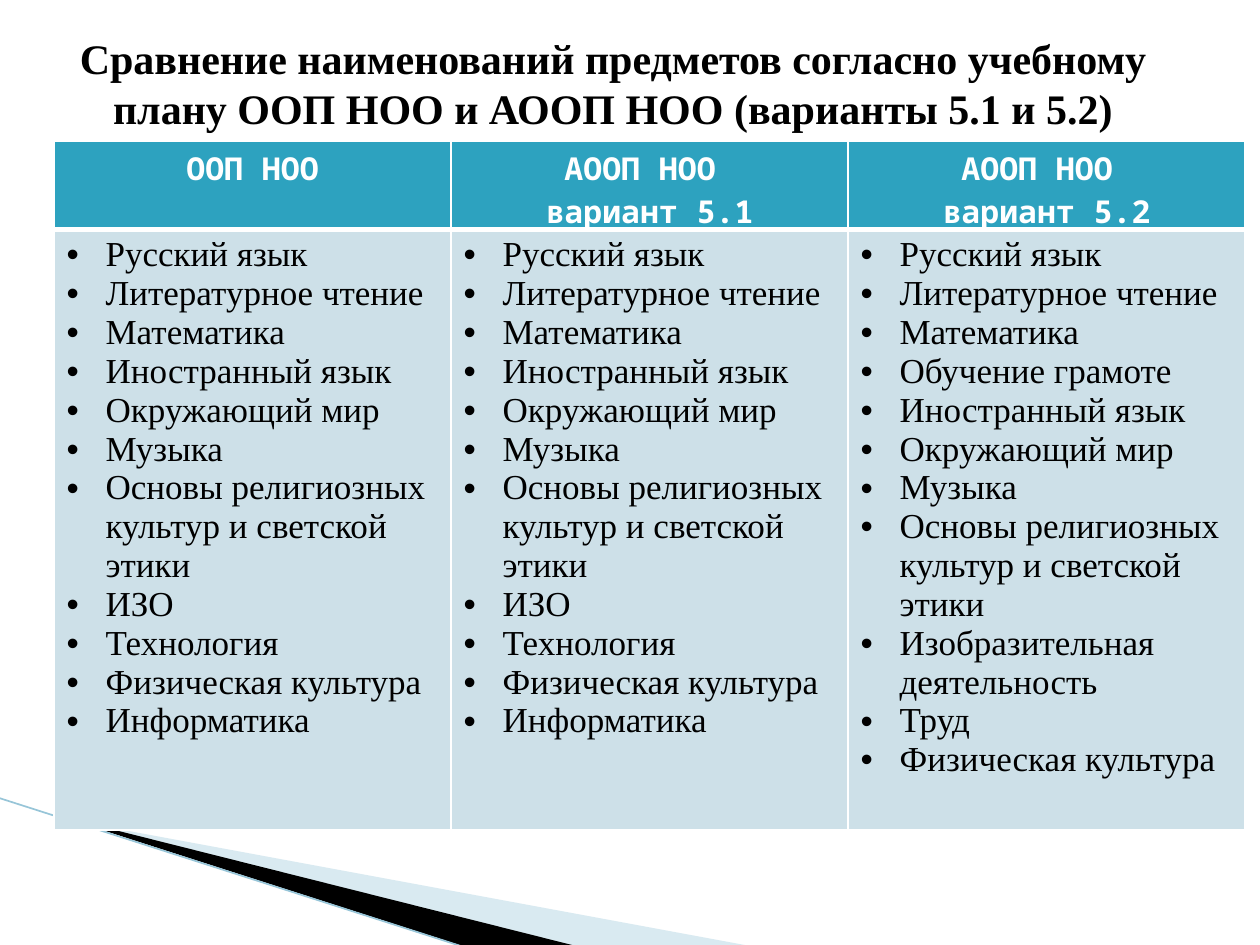
from lxml import etree
from pptx import Presentation
from pptx import util as u
from pptx.dml.color import RGBColor
from pptx.enum import shapes, text
from pptx.oxml.ns import qn

SCALE = 914400 / 126
COLORS = {"white": "FFFFFF", "black": "000000", "header": "2DA2BF",
          "body": "CDE0E8", "wedge": "A0CBDC", "line": "97C5D8"}
SERIF = "Times New Roman"
TITLE = {"name": SERIF, "size": u.Pt(24), "bold": True}
HEADING = {"name": "Noto Sans Mono", "size": u.Pt(18), "bold": True}
ITEM = {"name": SERIF, "size": u.Pt(20), "bold": False}
ETHICS = "Основы религиозных культур и светской этики"
COMMON = ["Русский язык", "Литературное чтение", "Математика", "Иностранный язык",
          "Окружающий мир", "Музыка", ETHICS, "ИЗО", "Технология",
          "Физическая культура", "Информатика"]
ADAPTED = [*COMMON[:3], "Обучение грамоте", *COMMON[3:7],
           "Изобразительная деятельность", "Труд", "Физическая культура"]
COLUMNS = [(["ООП НОО"], COMMON),
           (["АООП НОО ", "вариант 5.1"], COMMON),
           (["АООП НОО ", "вариант 5.2"], ADAPTED)]


def px(value):
    """Turn pixels into EMU."""
    return u.Emu(round(value * SCALE))


def rgb(name):
    """Look up a named colour."""
    return RGBColor.from_string(COLORS[name])


def add_bullet(para):
    """Give a paragraph a hanging round bullet."""
    properties = para._p.get_or_add_pPr()
    properties.set("marL", str(px(39)))
    properties.set("indent", str(px(-39)))
    etree.SubElement(properties, qn("a:buFont"), typeface="Arial")
    etree.SubElement(properties, qn("a:buChar"), char="•")


def write(frame, lines, style, color, align=None, bullet=False):
    """Write one paragraph per line in one style."""
    for index, line in enumerate(lines):
        para = frame.add_paragraph() if index else frame.paragraphs[0]
        para.alignment = align
        if bullet:
            add_bullet(para)
        span = para.add_run()
        span.text = line
        for key, value in style.items():
            setattr(span.font, key, value)
        span.font.color.rgb = rgb(color)


def add_wedge(page, points, color, opacity=None):
    """Add a filled outline through the given points."""
    builder = page.shapes.build_freeform(*points[0], scale=SCALE)
    builder.add_line_segments(points[1:], close=True)
    wedge = builder.convert_to_shape()
    wedge.shadow.inherit = False
    wedge.fill.solid()
    wedge.fill.fore_color.rgb = rgb(color)
    wedge.line.fill.background()
    if opacity:
        fill = wedge._element.spPr.find(qn("a:solidFill"))
        etree.SubElement(fill[0], qn("a:alpha"), val=str(opacity * 1000))


def add_line(page, start, end):
    """Add the thin slanted line."""
    line = page.shapes.add_connector(shapes.MSO_CONNECTOR.STRAIGHT,
                                     *map(px, (*start, *end)))
    line.line.color.rgb = rgb("line")
    line.line.width = u.Pt(0.95)
    etree.SubElement(line._element.spPr, qn("a:effectLst"))


def add_title(page, title):
    """Add the centred slide title."""
    box = page.shapes.add_textbox(*map(px, (54, 26, 1118, 115)))
    box.text_frame.word_wrap = True
    box.text_frame.auto_size = text.MSO_AUTO_SIZE.SHAPE_TO_FIT_TEXT
    write(box.text_frame, [title], TITLE, "black", text.PP_ALIGN.CENTER)


def style_cell(cell, color, top, bottom):
    """Set white borders, in points, and a plain fill."""
    properties = cell._tc.get_or_add_tcPr()
    for side, width in {"L": 1, "R": 1, "T": top, "B": bottom}.items():
        border = etree.SubElement(properties, qn(f"a:ln{side}"), w=str(u.Pt(width)))
        fill = etree.SubElement(border, qn("a:solidFill"))
        etree.SubElement(fill, qn("a:srgbClr"), val=COLORS["white"])
    cell.fill.solid()
    cell.fill.fore_color.rgb = rgb(color)


def add_subjects(page):
    """Add the table that compares the subject lists."""
    frame = page.shapes.add_table(2, len(COLUMNS), *map(px, (54, 141, 1191, 731)))
    table = frame.table
    for row in table.rows:
        row.height = px(52)
    frame.height = px(731)
    for index, (heading, subjects) in enumerate(COLUMNS):
        table.columns[index].width = px(397)
        head, body = table.cell(0, index), table.cell(1, index)
        style_cell(head, "header", 1, 3)
        style_cell(body, "body", 3, 1)
        write(head.text_frame, heading, HEADING, "white", text.PP_ALIGN.CENTER)
        write(body.text_frame, subjects, ITEM, "black", bullet=True)


def main():
    """Build and save the slide."""
    deck = Presentation()
    deck.slide_width, deck.slide_height = px(1260), px(945)
    page = deck.slides.add_slide(deck.slide_layouts[6])
    add_wedge(page, [(69, 820), (750, 946), (575, 946), (69, 819)], "wedge", 40)
    add_wedge(page, [(67, 818), (576, 946), (469, 948), (68, 819)], "black")
    add_line(page, (-1, 798), (467, 948))
    add_title(page, "Сравнение наименований предметов согласно учебному плану "
                    "ООП НОО и АООП НОО (варианты 5.1 и 5.2)")
    add_subjects(page)
    deck.save("out.pptx")


if __name__ == "__main__":
    main()
